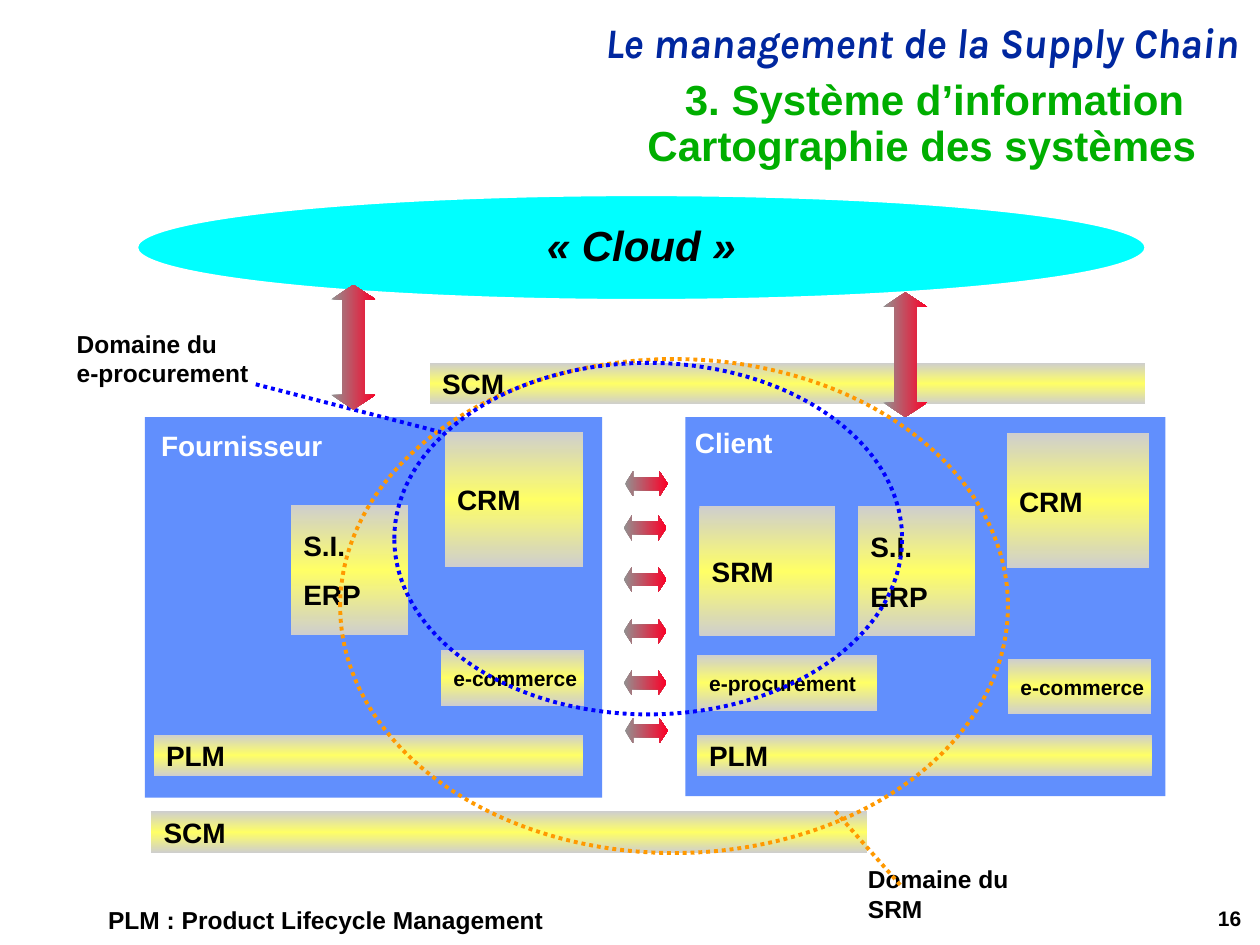
import lxml.etree
import pptx
import pptx.dml.color
import pptx.enum.dml
import pptx.enum.shapes
import pptx.enum.text
import pptx.oxml.ns
import pptx.util

SHAPE = pptx.enum.shapes.MSO_SHAPE
ALIGN = pptx.enum.text.PP_ALIGN
ANCHOR = pptx.enum.text.MSO_ANCHOR
FIT = pptx.enum.text.MSO_AUTO_SIZE.SHAPE_TO_FIT_TEXT
qn = pptx.oxml.ns.qn

WIDTH, HEIGHT = pptx.util.Inches(10), pptx.util.Inches(7.5)
COLUMNS, ROWS = 100, 75

BLACK, WHITE, NAVY, GREEN = "000000", "FFFFFF", "00279F", "00AE00"
COMPANY_BLUE, CLOUD_CYAN = "618FFD", "00FFFF"
SRM_ORANGE, PROCUREMENT_BLUE = "FF9900", "0000FF"
SYSTEM_STOPS = {0: "CECECE", 50: "FFFF66", 100: "CECECE"}
FLOW_STOPS = {0: "919191", 100: "FC0128"}


def color(hex_text):
    return pptx.dml.color.RGBColor.from_string(hex_text)


def place(left, top, width, height):
    """Turn columns and rows of the grid into slide lengths."""
    return (int(left * WIDTH / COLUMNS), int(top * HEIGHT / ROWS),
            int(width * WIDTH / COLUMNS), int(height * HEIGHT / ROWS))


def set_all(target, values):
    for name, value in values.items():
        setattr(target, name, value)


def write(box, lines, size=16, ink=BLACK, align=ALIGN.LEFT, spacing=1.0,
          font="Arial", italic=False, **frame_format):
    """Write one paragraph per line; the frame format goes to the text frame."""
    frame = box.text_frame
    set_all(frame, {"word_wrap": True, **frame_format})
    for index, line in enumerate(lines):
        para = frame.add_paragraph() if index else frame.paragraphs[0]
        para.text = line
        set_all(para, {"alignment": align, "line_spacing": spacing})
        if index:
            para.space_before = pptx.util.Pt(size * 0.56)
        for span in para.runs:
            set_all(span.font, {"name": font, "size": pptx.util.Pt(size),
                                "bold": True, "italic": italic})
            span.font.color.rgb = color(ink)


def add_text(page, area, line, **text_format):
    box = page.shapes.add_textbox(*place(*area))
    write(box, [line], **text_format)


def add_plain(page, kind, area, fill=None):
    """Add a preset shape without shadow or outline."""
    shape = page.shapes.add_shape(kind, *place(*area))
    shape.shadow.inherit = False
    shape.line.fill.background()
    if fill:
        shape.fill.solid()
        shape.fill.fore_color.rgb = color(fill)
    else:
        shape.fill.background()
    return shape


def shade(shape, stops, angle):
    """Fill with a linear gradient that keeps its direction when turned."""
    properties = shape._element.spPr
    gradient = lxml.etree.Element(qn("a:gradFill"), rotWithShape="0")
    stop_list = lxml.etree.SubElement(gradient, qn("a:gsLst"))
    for percent, hex_text in stops.items():
        stop = lxml.etree.SubElement(stop_list, qn("a:gs"), pos=str(percent * 1000))
        lxml.etree.SubElement(stop, qn("a:srgbClr"), val=hex_text)
    lxml.etree.SubElement(gradient, qn("a:lin"), ang=str(angle * 60000), scaled="0")
    properties.replace(properties.find(qn("a:noFill")), gradient)


def add_system(page, area, *lines, size=16):
    box = add_plain(page, SHAPE.RECTANGLE, area)
    shade(box, SYSTEM_STOPS, 90)
    write(box, lines, size, vertical_anchor=ANCHOR.MIDDLE, word_wrap=False)


def add_flow(page, area, rotation=0):
    arrow = add_plain(page, SHAPE.LEFT_RIGHT_ARROW, area)
    shade(arrow, FLOW_STOPS, 0)
    arrow.adjustments[0], arrow.adjustments[1] = 0.5, 0.33
    arrow.rotation = rotation


def dot(line, hex_text):
    line.color.rgb = color(hex_text)
    set_all(line, {"width": pptx.util.Pt(2.25),
                   "dash_style": pptx.enum.dml.MSO_LINE.ROUND_DOT})


def add_domain(page, area, hex_text):
    dot(add_plain(page, SHAPE.OVAL, area).line, hex_text)


def add_pointer(page, start, end, hex_text):
    ends = place(*start, *end)
    pointer = page.shapes.add_connector(pptx.enum.shapes.MSO_CONNECTOR.STRAIGHT, *ends)
    dot(pointer.line, hex_text)
    lxml.etree.SubElement(pointer._element.spPr, qn("a:effectLst"))


def add_companies(page):
    for area in ((11.5, 33.1, 36.3, 30.2), (54.4, 33.1, 38.1, 30.1)):
        add_plain(page, SHAPE.RECTANGLE, area, COMPANY_BLUE)
    add_text(page, (11.8, 33.5, 15.2, 3.7), "Fournisseur", ink=WHITE, auto_size=FIT)
    add_text(page, (49.3, 33.3, 13, 3.7), "Client", ink=WHITE,
             align=ALIGN.RIGHT, auto_size=FIT)


def add_systems(page):
    for left, top in ((12, 64.4), (34.1, 28.8)):
        add_system(page, (left, top, 56.8, 3.3), "SCM")
    add_system(page, (55.5, 40.2, 10.8, 10.3), "SRM")
    for left, top in ((68.1, 40.2), (23.1, 40.1)):
        add_system(page, (left, top, 9.3, 10.3), "S.I.", "ERP")
    for left, top, width in ((79.9, 34.4, 11.3), (35.3, 34.3, 11)):
        add_system(page, (left, top, width, 10.7), "CRM")
    for left, top in ((80, 52.3), (35, 51.6)):
        add_system(page, (left, top, 11.35, 4.4), "e-commerce", size=12)
    for left, width in ((12.2, 34.1), (55.3, 36.1)):
        add_system(page, (left, 58.3, width, 3.3), "PLM")


def add_domains(page):
    add_domain(page, (27, 28.5, 53, 39.2), SRM_ORANGE)
    add_pointer(page, (66.3, 64.4), (71.5, 70.3), SRM_ORANGE)
    add_system(page, (55.3, 52, 14.3, 4.4), "e-procurement", size=12)
    add_domain(page, (31.3, 28.8, 40.3, 27.9), PROCUREMENT_BLUE)
    add_pointer(page, (20.3, 30.5), (35, 34.3), PROCUREMENT_BLUE)
    add_text(page, (5.1, 25.6, 20.2, 5.7), "Domaine du\ve-procurement",
             size=14, auto_size=FIT)


def add_cloud(page):
    cloud = add_plain(page, SHAPE.OVAL, (10.9, 15.5, 80, 8.3), CLOUD_CYAN)
    cloud.line.color.rgb = color(WHITE)
    cloud.line.width = pptx.util.Pt(1)
    write(cloud, ["«\u00a0Cloud\u00a0»".replace("\u00a0", " ")], 24, align=ALIGN.CENTER,
          spacing=0.9, italic=True, vertical_anchor=ANCHOR.MIDDLE)
    for left, top in ((66.9, 26.4), (23.1, 25.8)):
        add_flow(page, (left, top, 9.9, 3.5), rotation=90)


def main():
    deck = pptx.Presentation()
    set_all(deck, {"slide_width": WIDTH, "slide_height": HEIGHT})
    page = deck.slides.add_slide(deck.slide_layouts[6])

    add_text(page, (18.5, 1.3, 80.8, 4.6), "Le management de la Supply Chain",
             size=24, ink=NAVY, align=ALIGN.RIGHT, spacing=0.9, font="Karla",
             italic=True, auto_size=FIT)
    add_text(page, (67.9, 68.1, 13.6, 5.7), "Domaine du SRM", size=14, auto_size=FIT)
    add_companies(page)
    for left, top in ((49.6, 37.4), (49.5, 40.9), (49.5, 45), (49.5, 49.1),
                      (49.5, 53.2), (49.6, 57)):
        add_flow(page, (left, top, 3.4, 2))
    add_systems(page)
    add_domains(page)
    add_text(page, (16.7, 5.7, 79.2, 8.4),
             "3. Système d’information \vCartographie des systèmes", size=24,
             ink=GREEN, align=ALIGN.RIGHT, spacing=0.9, vertical_anchor=ANCHOR.MIDDLE)
    add_text(page, (7.6, 71.6, 36.7, 3.1), "PLM : Product Lifecycle Management",
             size=14, spacing=0.9, word_wrap=False, auto_size=FIT)
    add_cloud(page)
    add_text(page, (77, 71, 22.5, 4), "16", size=12, align=ALIGN.RIGHT,
             spacing=0.9, vertical_anchor=ANCHOR.MIDDLE)
    deck.save("out.pptx")


if __name__ == "__main__":
    main()
